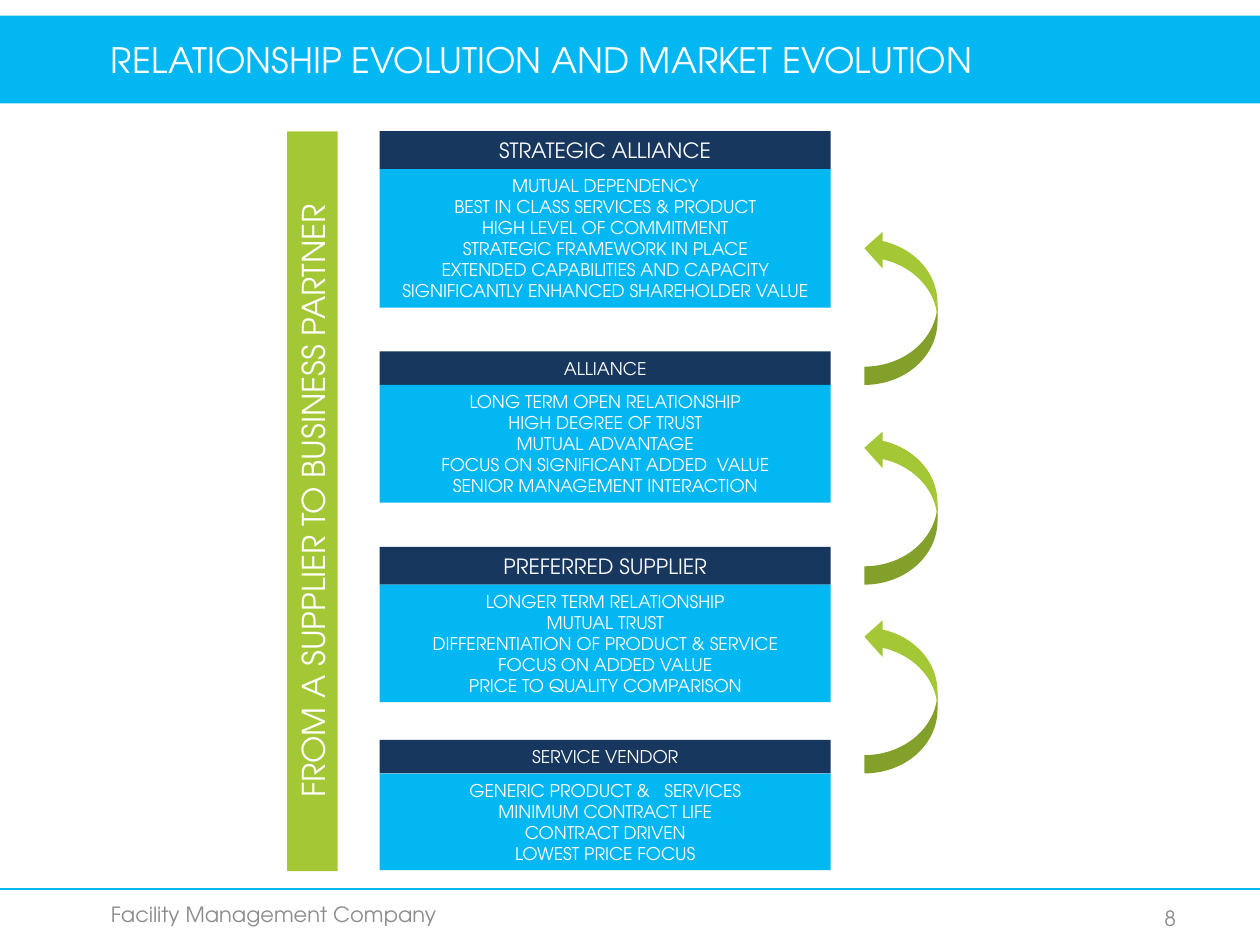
from pptx import Presentation
from pptx.dml.color import RGBColor
from pptx.enum.shapes import MSO_CONNECTOR, MSO_SHAPE
from pptx.enum.text import MSO_ANCHOR, PP_ALIGN
from pptx.oxml.ns import qn
from pptx.util import Pt
from lxml import etree

RECT, CURVED_ARROW = MSO_SHAPE.RECTANGLE, MSO_SHAPE.CURVED_LEFT_ARROW
LEFT, CENTER, RIGHT = PP_ALIGN.LEFT, PP_ALIGN.CENTER, PP_ALIGN.RIGHT
MIDDLE = MSO_ANCHOR.MIDDLE

BLUE = RGBColor(0x03, 0xB7, 0xF3)
NAVY = RGBColor(0x17, 0x37, 0x5E)
GREEN = RGBColor(0xA4, 0xC8, 0x35)
GREY = RGBColor(0x8C, 0x8C, 0x8C)
WHITE = RGBColor(0xFF, 0xFF, 0xFF)
FONT = "TeX Gyre Adventor"

TITLE = "RELATIONSHIP EVOLUTION AND MARKET EVOLUTION"
SIDEBAR = "FROM A SUPPLIER TO BUSINESS PARTNER"
FOOTER = "Facility Management Company"
PAGE = "8"

# (top, heading, heading size, lines)
STAGES = [
    (75, "STRATEGIC ALLIANCE", 12, [
        "MUTUAL DEPENDENCY",
        "BEST IN CLASS SERVICES & PRODUCT",
        "HIGH LEVEL OF COMMITMENT",
        "STRATEGIC FRAMEWORK IN PLACE",
        "EXTENDED CAPABILITIES AND CAPACITY",
        "SIGNIFICANTLY ENHANCED SHAREHOLDER VALUE"]),
    (200.8, "ALLIANCE", 10, [
        "LONG TERM OPEN RELATIONSHIP",
        "HIGH DEGREE OF TRUST",
        "MUTUAL ADVANTAGE",
        "FOCUS ON SIGNIFICANT ADDED  VALUE",
        "SENIOR MANAGEMENT INTERACTION"]),
    (312.5, "PREFERRED SUPPLIER", 12, [
        "LONGER TERM RELATIONSHIP",
        "MUTUAL TRUST",
        "DIFFERENTIATION OF PRODUCT & SERVICE",
        "FOCUS ON ADDED VALUE",
        "PRICE TO QUALITY COMPARISON"]),
    (422.8, "SERVICE VENDOR", 10, [
        "GENERIC PRODUCT &   SERVICES",
        "MINIMUM CONTRACT LIFE",
        "CONTRACT DRIVEN",
        "LOWEST PRICE FOCUS"]),
]

SLIDE_W, SLIDE_H = 720, 540
BAND_TOP, BAND_H = 8.9, 50.3
MARGIN_X = 56.2
CARD_X, CARD_W = 216.9, 257.8
BODY_SIZE = 10
LINE_SPACING, PADDING = 1.2, 7.2
ARROW_X, ARROW_W, ARROW_H = 493.9, 41.8, 88.6
SIDE_X, SIDE_W, SIDE_TOP, SIDE_H = 164, 29, 75, 422.8
RULE_Y, FOOTER_H = 508.2, 28.8


def write(sp, lines, size, color, align):
    tf = sp.text_frame
    tf.word_wrap = True
    tf.vertical_anchor = MIDDLE
    for i, line in enumerate(lines):
        p = tf.paragraphs[0] if i == 0 else tf.add_paragraph()
        p.alignment = align
        r = p.add_run()
        r.text = line
        r.font.size = Pt(size)
        r.font.name = FONT
        r.font.color.rgb = color


def add_block(shapes, kind, x, y, w, h, fill):
    sp = shapes.add_shape(kind, Pt(x), Pt(y), Pt(w), Pt(h))
    sp.shadow.inherit = False
    sp.fill.solid()
    sp.fill.fore_color.rgb = fill
    sp.line.fill.background()
    return sp


def text_height(size, count):
    return size * LINE_SPACING * count + PADDING


def add_stage(shapes, top, heading, size, lines):
    """Draw one stage and return the bottom of its heading."""
    split = top + text_height(size, 1)
    head = add_block(shapes, RECT, CARD_X, top, CARD_W, split - top, NAVY)
    write(head, [heading], size, WHITE, CENTER)
    body = add_block(shapes, RECT, CARD_X, split, CARD_W,
                     text_height(BODY_SIZE, len(lines)), BLUE)
    write(body, lines, BODY_SIZE, WHITE, CENTER)
    return split


def add_header(shapes):
    band = add_block(shapes, RECT, 0, BAND_TOP, SLIDE_W, BAND_H, BLUE)
    title = shapes.title
    band._element.addnext(title._element)
    title.left, title.top = Pt(MARGIN_X), Pt(BAND_TOP)
    title.width, title.height = Pt(587), Pt(BAND_H)
    write(title, [TITLE], 20, WHITE, LEFT)


def add_footer(shapes):
    rule = shapes.add_connector(MSO_CONNECTOR.STRAIGHT, 0, Pt(RULE_Y),
                                Pt(SLIDE_W), Pt(RULE_Y))
    rule.line.color.rgb = BLUE
    rule.line.width = Pt(1)
    etree.SubElement(rule._element.spPr, qn("a:effectLst"))
    for x, y, w, text, align in [(MARGIN_X, 508.2, 228, FOOTER, LEFT),
                                 (511, 510, 168, PAGE, RIGHT)]:
        box = shapes.add_textbox(Pt(x), Pt(y), Pt(w), Pt(FOOTER_H))
        write(box, [text], 12, GREY, align)


def add_sidebar(shapes):
    # Laid out horizontally about its centre, then turned to read upwards
    x = SIDE_X + (SIDE_W - SIDE_H) / 2
    y = SIDE_TOP + (SIDE_H - SIDE_W) / 2
    bar = add_block(shapes, RECT, x, y, SIDE_H, SIDE_W, GREEN)
    bar.rotation = 270
    write(bar, [SIDEBAR], 18, WHITE, CENTER)


def main():
    prs = Presentation()
    prs.slide_width, prs.slide_height = Pt(SLIDE_W), Pt(SLIDE_H)
    shapes = prs.slides.add_slide(prs.slide_layouts[5]).shapes
    add_header(shapes)
    add_footer(shapes)
    add_sidebar(shapes)
    splits = [add_stage(shapes, *stage) for stage in STAGES]
    # Each arrow rises from the heading of the stage below
    for split in splits[1:]:
        arrow = add_block(shapes, CURVED_ARROW, ARROW_X, split - ARROW_H,
                          ARROW_W, ARROW_H, GREEN)
        arrow._element.spPr.find(qn("a:xfrm")).set("flipV", "1")
    prs.save("out.pptx")


if __name__ == "__main__":
    main()
